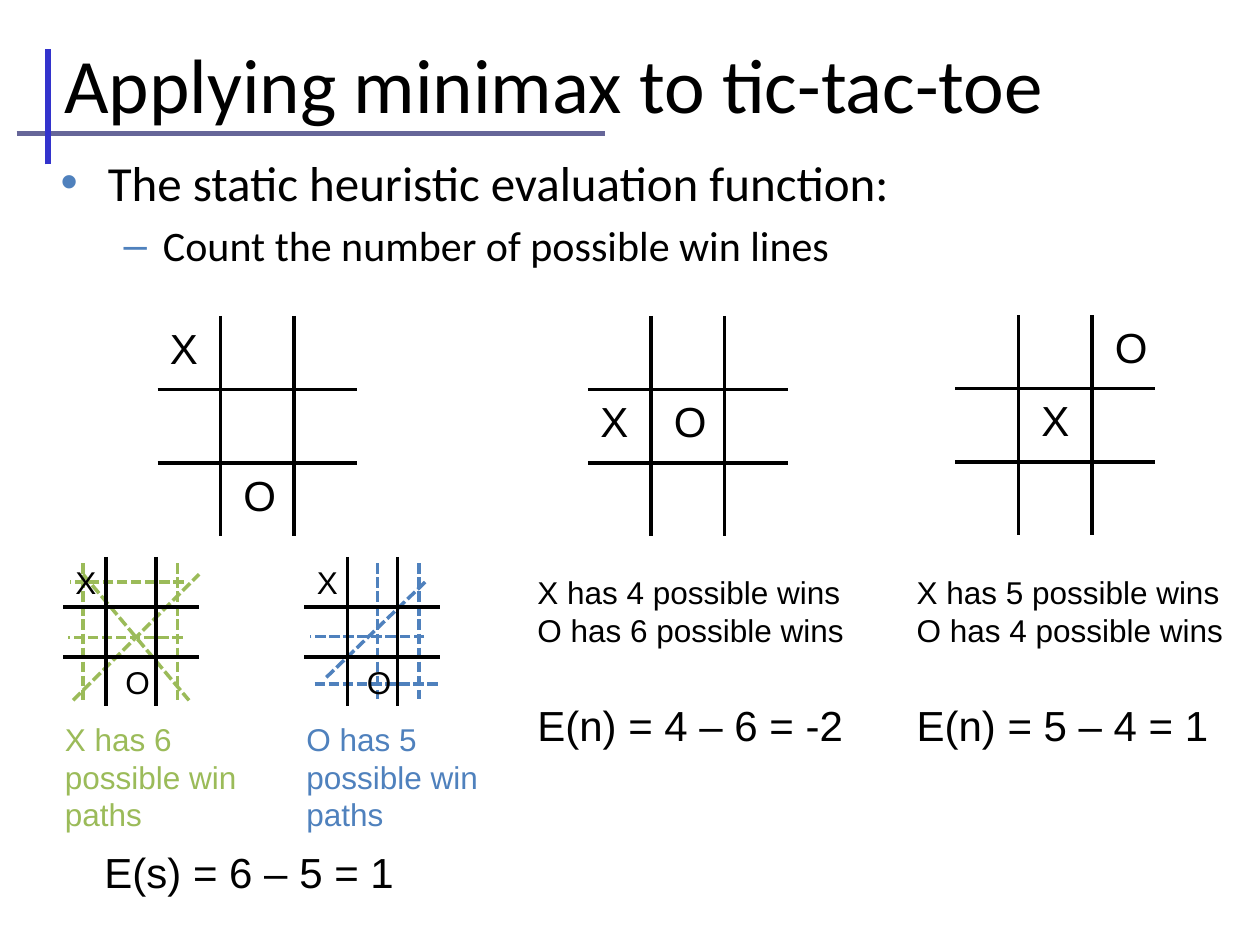
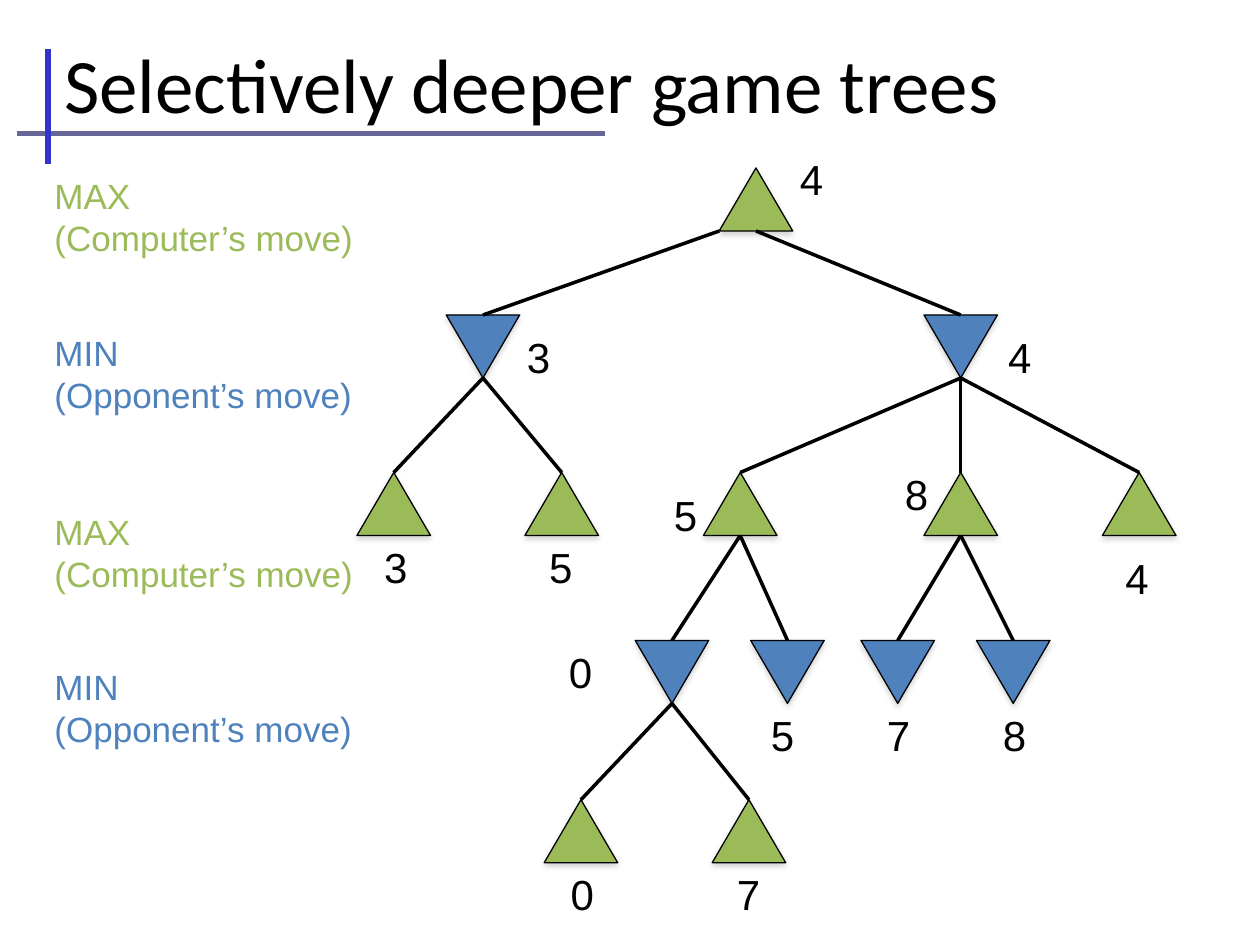
from lxml import etree
from pptx import Presentation
from pptx.dml.color import RGBColor
from pptx.enum.dml import MSO_LINE
from pptx.enum.shapes import MSO_CONNECTOR, MSO_SHAPE
from pptx.enum.text import MSO_ANCHOR, MSO_AUTO_SIZE, PP_ALIGN
from pptx.oxml.ns import qn
from pptx.util import Pt

STRAIGHT = MSO_CONNECTOR.STRAIGHT
TRIANGLE = MSO_SHAPE.ISOSCELES_TRIANGLE
DASHED = MSO_LINE.SQUARE_DOT
MIDDLE, LEFT = MSO_ANCHOR.MIDDLE, PP_ALIGN.LEFT
FIXED, GROW = MSO_AUTO_SIZE.NONE, MSO_AUTO_SIZE.SHAPE_TO_FIT_TEXT

COLORS = {
    "ink": "000000",
    "max": "9BBB59",
    "min": "4F81BD",
    "rule": "666699",
    "bar": "3333CC",
    "shadow": "808080",
}
TITLE_CONTENT, TITLE_ONLY = 1, 5
HEADING_FONT, LABEL_FONT = "Calibri", "Arial"
LINE_HEIGHT = 1.2

# Board measures at full scale
CELL = 42
BOARD_W, BOARD_H = 114, 125.5
COLUMN_LINES, ROW_LINES = (36, 78), (42, 84)
MARK_WIDTHS = {"X": 31, "O": 33}
SMALL = 0.68

# Winning lines inside a small board: x1, y1, x2, y2
X_WINS = [
    (11.5, 3.6, 11.5, 82), (11.5, 10, 72, 82), (69, 14.4, 4.3, 14.4),
    (68.4, 46, 2.9, 46), (65.5, 3.6, 65.5, 82), (5.8, 82, 77.8, 10),
]
O_WINS = [
    (41.8, 3.6, 41.8, 81.4), (69, 14.4, 11.5, 69.8), (68.4, 45.4, 2.9, 45.4),
    (65.5, 3.6, 65.5, 81.4), (5.8, 72.7, 77.8, 72.7),
]

NODE_W, NODE_H = 42, 36
LEVEL_TOPS = (96, 180, 270, 366, 457)
# name, parent, level, centre x, value, value left, value top
TREE = [
    ("root", None, 0, 432, "4", 450, 84),
    ("a", "root", 1, 276, "3", 294, 186),
    ("b", "root", 1, 549, "4", 569, 186),
    ("a1", "a", 2, 225, "3", 212.4, 306),
    ("a2", "a", 2, 321, "5", 306.7, 306),
    ("b1", "b", 2, 423, "5", 378, 276),
    ("b2", "b", 2, 549, "8", 510, 264),
    ("b3", "b", 2, 651, "4", 636, 312),
    ("b11", "b1", 3, 384, "0", 318, 366),
    ("b12", "b1", 3, 450, "5", 433.4, 402),
    ("b21", "b2", 3, 513, "7", 499.7, 402),
    ("b22", "b2", 3, 579, "8", 566, 402),
    ("b111", "b11", 4, 332, "0", 319, 493),
    ("b112", "b11", 4, 428, "7", 414, 493),
]


def rgb(color):
    return RGBColor.from_string(COLORS[color])


def add_run(p, text, size, font, color="ink"):
    r = p.add_run()
    r.text = text
    r.font.size = Pt(size)
    r.font.name = font
    r.font.color.rgb = rgb(color)


def add_line(slide, x1, y1, x2, y2, color="ink", width=2, dash=None):
    line = slide.shapes.add_connector(STRAIGHT, Pt(x1), Pt(y1), Pt(x2), Pt(y2))
    line.line.color.rgb = rgb(color)
    line.line.width = Pt(width)
    if dash:
        line.line.dash_style = dash
    etree.SubElement(line._element.spPr, qn("a:effectLst"))
    return line


def add_text(slide, x, y, w, lines, color="ink", wrap=False):
    """Add a text box; each line is (text, size, space before)."""
    h = 7.2 + sum(size * LINE_HEIGHT + before for _, size, before in lines)
    tf = slide.shapes.add_textbox(Pt(x), Pt(y), Pt(w), Pt(h)).text_frame
    tf.word_wrap = wrap
    tf.auto_size = GROW
    for i, (text, size, before) in enumerate(lines):
        p = tf.add_paragraph() if i else tf.paragraphs[0]
        p.line_spacing = Pt(size * LINE_HEIGHT)
        p.space_before = Pt(before)
        add_run(p, text, size, LABEL_FONT, color)


def place(sp, x, y, w, h):
    sp.left, sp.top, sp.width, sp.height = Pt(x), Pt(y), Pt(w), Pt(h)
    sp.text_frame.auto_size = FIXED


def add_titled_slide(prs, layout, title):
    """Add a slide with the crossed rules and the left-aligned title."""
    slide = prs.slides.add_slide(prs.slide_layouts[layout])
    add_line(slide, 9.5, 76.2, 345.5, 76.2, "rule", 3)
    add_line(slide, 27.5, 94, 27.5, 28, "bar", 3)
    sp = slide.shapes.title
    place(sp, 29.5, 7.2, 642, 80.6)
    sp.text_frame.vertical_anchor = MIDDLE
    p = sp.text_frame.paragraphs[0]
    p.alignment = LEFT
    add_run(p, title, 44, HEADING_FONT)
    # Rules lie behind the title
    slide.shapes._spTree.append(sp._element)
    return slide


def add_bullets(slide, items):
    sp = slide.placeholders[1]
    place(sp, 27.4, 83.5, 684, 420)
    tf = sp.text_frame
    for i, (text, level, size) in enumerate(items):
        p = tf.add_paragraph() if i else tf.paragraphs[0]
        p.level = level
        bullet_color = etree.SubElement(p._p.get_or_add_pPr(), qn("a:buClr"))
        etree.SubElement(bullet_color, qn("a:srgbClr"), val=COLORS["min"])
        add_run(p, text, size, HEADING_FONT)


def add_board(slide, x, y, marks, scale=1, size=24):
    """Draw a tic-tac-toe grid; marks are (symbol, column, row)."""
    for dx in COLUMN_LINES:
        add_line(slide, x + dx * scale, y, x + dx * scale, y + BOARD_H * scale)
    for dy in ROW_LINES:
        add_line(slide, x, y + dy * scale, x + BOARD_W * scale, y + dy * scale)
    for symbol, col, row in marks:
        add_text(slide, x + col * CELL * scale, y + row * CELL * scale,
                 7.2 * 2 + (MARK_WIDTHS[symbol] - 14.4) * size / 24,
                 [(symbol, size, 0)])


def add_win_board(slide, x, y, marks, wins, color, caption):
    for x1, y1, x2, y2 in wins:
        add_line(slide, x + x1, y + y1, x + x2, y + y2, color, dash=DASHED)
    add_board(slide, x, y, marks, SMALL, 18)
    add_text(slide, x - 6, y + 89.6, 120, [(caption, 18, 0)], color, wrap=True)


def add_score(slide, x, w, x_wins, o_wins, result):
    add_text(slide, x, 324, w, [
        (f"X has {x_wins} possible wins", 18, 0),
        (f"O has {o_wins} possible wins", 18, 0),
        (f"E(n) = {x_wins} – {o_wins} = {result}", 24, 24 * LINE_HEIGHT),
    ])


def add_node(slide, player, center, top):
    """Add a triangle, pointing up for max and down for min."""
    sp = slide.shapes.add_shape(TRIANGLE, Pt(center - NODE_W / 2), Pt(top),
                                Pt(NODE_W), Pt(NODE_H))
    sp.fill.solid()
    sp.fill.fore_color.rgb = rgb(player)
    sp.line.color.rgb = rgb("ink")
    sp.line.width = Pt(0.75)
    spPr = sp._element.spPr
    if player == "min":
        spPr.find(qn("a:xfrm")).set("flipV", "1")
    effects = etree.SubElement(spPr, qn("a:effectLst"))
    shadow = etree.SubElement(effects, qn("a:outerShdw"), blurRad="40000",
                              dist="23000", dir="5400000", rotWithShape="0")
    tint = etree.SubElement(shadow, qn("a:srgbClr"), val=COLORS["shadow"])
    etree.SubElement(tint, qn("a:alpha"), val="35000")
    return sp


def add_tree(slide):
    nodes = {}
    for name, parent, level, center, value, value_x, value_y in TREE:
        top = LEVEL_TOPS[level]
        player = "min" if level % 2 else "max"
        sp = add_node(slide, player, center, top)
        nodes[name] = (center, top)
        if parent:
            start, parent_top = nodes[parent]
            if name == "a":  # this edge leaves the root's left corner
                start -= NODE_W / 2
            edge = add_line(slide, start, parent_top + NODE_H, center, top)
            if player == "max":
                edge.end_connect(sp, 0)
        add_text(slide, value_x, value_y, 28, [(value, 24, 0)])


def build_heuristic_slide(prs):
    slide = add_titled_slide(prs, TITLE_CONTENT, "Applying minimax to tic-tac-toe")
    add_bullets(slide, [
        ("The static heuristic evaluation function:", 0, 28),
        ("Count the number of possible win lines", 1, 24),
    ])
    corner_marks = [("X", 0, 0), ("O", 1, 2)]
    add_board(slide, 90, 180.5, corner_marks)
    add_board(slide, 336, 180.5, [("X", 0, 1), ("O", 1, 1)])
    add_board(slide, 546, 180, [("X", 1, 1), ("O", 2, 0)])
    add_win_board(slide, 36, 318.2, corner_marks, X_WINS, "max",
                  "X has 6 possible win paths")
    add_win_board(slide, 174, 318.2, corner_marks, O_WINS, "min",
                  "O has 5 possible win paths")
    add_text(slide, 52.6, 480, 181.5, [("E(s) = 6 – 5 = 1", 24, 0)])
    add_score(slide, 300, 191.5, 4, 6, -2)
    add_score(slide, 516.7, 194.4, 5, 4, 1)


def build_tree_slide(prs):
    slide = add_titled_slide(prs, TITLE_ONLY, "Selectively deeper game trees")
    movers = {"max": ("MAX", "(Computer’s move)"),
              "min": ("MIN", "(Opponent’s move)")}
    for player, y in (("max", 96), ("min", 186), ("max", 288), ("min", 376.5)):
        add_text(slide, 24, y, 186, [(t, 20, 0) for t in movers[player]], player)
    add_tree(slide)


def main():
    prs = Presentation()
    prs.slide_width, prs.slide_height = Pt(720), Pt(540)
    build_heuristic_slide(prs)
    build_tree_slide(prs)
    prs.save("out.pptx")


if __name__ == "__main__":
    main()
